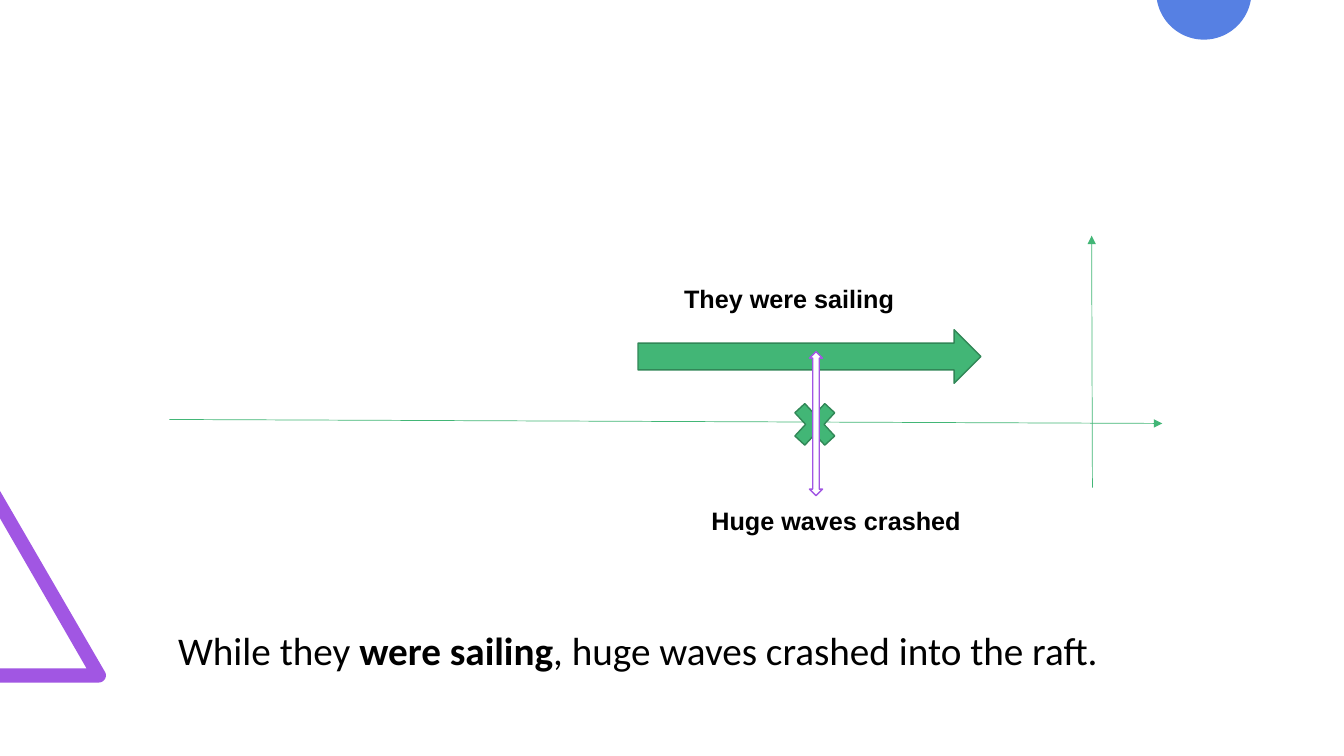
import math

from lxml import etree
from pptx import Presentation
from pptx.dml.color import RGBColor
from pptx.enum.shapes import MSO_CONNECTOR, MSO_SHAPE
from pptx.enum.text import MSO_ANCHOR, PP_ALIGN
from pptx.oxml.ns import qn
from pptx.util import Cm, Pt

STRAIGHT = MSO_CONNECTOR.STRAIGHT
MULTIPLY = MSO_SHAPE.MATH_MULTIPLY
RIGHT_ARROW = MSO_SHAPE.RIGHT_ARROW
UP_DOWN_ARROW = MSO_SHAPE.UP_DOWN_ARROW
CENTER, LEFT = PP_ALIGN.CENTER, PP_ALIGN.LEFT
TOP, BOTTOM = MSO_ANCHOR.TOP, MSO_ANCHOR.BOTTOM
COLORS = {
    "blue": "5680E3",
    "purple": "A156E3",
    "green": "42B676",
    "dark_green": "318757",
    "white": "FFFFFF",
    "black": "000000",
}


class SlideBuilder:
    """Draws styled elements on one slide, with lengths in centimetres."""

    def __init__(self, slide):
        self.shapes = slide.shapes

    def color(self, name):
        return RGBColor.from_string(COLORS[name])

    def paint(self, sp, fill, line=None):
        sp.shadow.inherit = False
        sp.fill.solid()
        sp.fill.fore_color.rgb = self.color(fill)
        if line:
            sp.line.color.rgb = self.color(line)
            sp.line.width = Pt(1)
        else:
            sp.line.fill.background()

    def outline(self, points, fill):
        points = [(Cm(x), Cm(y)) for x, y in points]
        builder = self.shapes.build_freeform(*points[0])
        builder.add_line_segments(points[1:], close=True)
        self.paint(builder.convert_to_shape(), fill)

    def shape(self, kind, box, fill, line):
        self.paint(self.shapes.add_shape(kind, *map(Cm, box)), fill, line)

    def axis(self, *ends):
        cxn = self.shapes.add_connector(STRAIGHT, *map(Cm, ends))
        cxn.line.color.rgb = self.color("green")
        cxn.line.width = Pt(0.5)
        etree.SubElement(cxn.line._get_or_add_ln(), qn("a:tailEnd"), type="triangle")
        etree.SubElement(cxn._element.spPr, qn("a:effectLst"))

    def text(self, box, runs, font, size, align=LEFT, anchor=TOP, spacing=1.0):
        tf = self.shapes.add_textbox(*map(Cm, box)).text_frame
        tf.word_wrap = True
        tf.vertical_anchor = anchor
        p = tf.paragraphs[0]
        p.alignment = align
        p.line_spacing = spacing
        for content, bold in runs:
            r = p.add_run()
            r.text = content
            r.font.name = font
            r.font.size = Pt(size)
            r.font.bold = bold
            r.font.color.rgb = self.color("black")


def arc(cx, cy, radius, start, end, steps):
    angles = [math.radians(start + (end - start) * i / steps) for i in range(steps + 1)]
    return [(cx + radius * math.cos(a), cy + radius * math.sin(a)) for a in angles]


def main():
    prs = Presentation()
    prs.slide_width, prs.slide_height = Cm(33.87), Cm(19.05)
    s = SlideBuilder(prs.slides.add_slide(prs.slide_layouts[6]))

    rounded_corner = arc(2.49, 17.02, 0.18, -30, 90, 12)
    s.outline(
        [(0, 17.2), (0, 16.84), (2.18, 16.84), (0, 13.06), (0, 12.37)] + rounded_corner,
        "purple",
    )
    s.outline(arc(30.34, -0.2, 1.2, 9.6, 170.4, 60), "blue")

    sentence = [
        ("While they ", False),
        ("were sailing", True),
        (", huge waves crashed into the raft.", False),
    ]
    s.text((1.47, 12.78, 29.21, 4.34), sentence, "Calibri", 28, CENTER, BOTTOM, 0.9)

    s.axis(4.27, 10.57, 29.29, 10.67)
    s.axis(27.53, 12.29, 27.51, 5.94)
    s.shape(MULTIPLY, (19.81, 9.91, 1.45, 1.57), "green", "dark_green")
    s.shape(RIGHT_ARROW, (16.08, 8.31, 8.64, 1.35), "green", "dark_green")
    s.text((16.99, 7.01, 7.62, 1.02), [("They were sailing", True)], "Arial", 18)
    s.text((17.68, 12.6, 7.06, 1.02), [("Huge waves crashed", True)], "Arial", 18)
    s.shape(UP_DOWN_ARROW, (20.4, 8.86, 0.33, 3.63), "white", "purple")

    prs.save("out.pptx")


if __name__ == "__main__":
    main()
